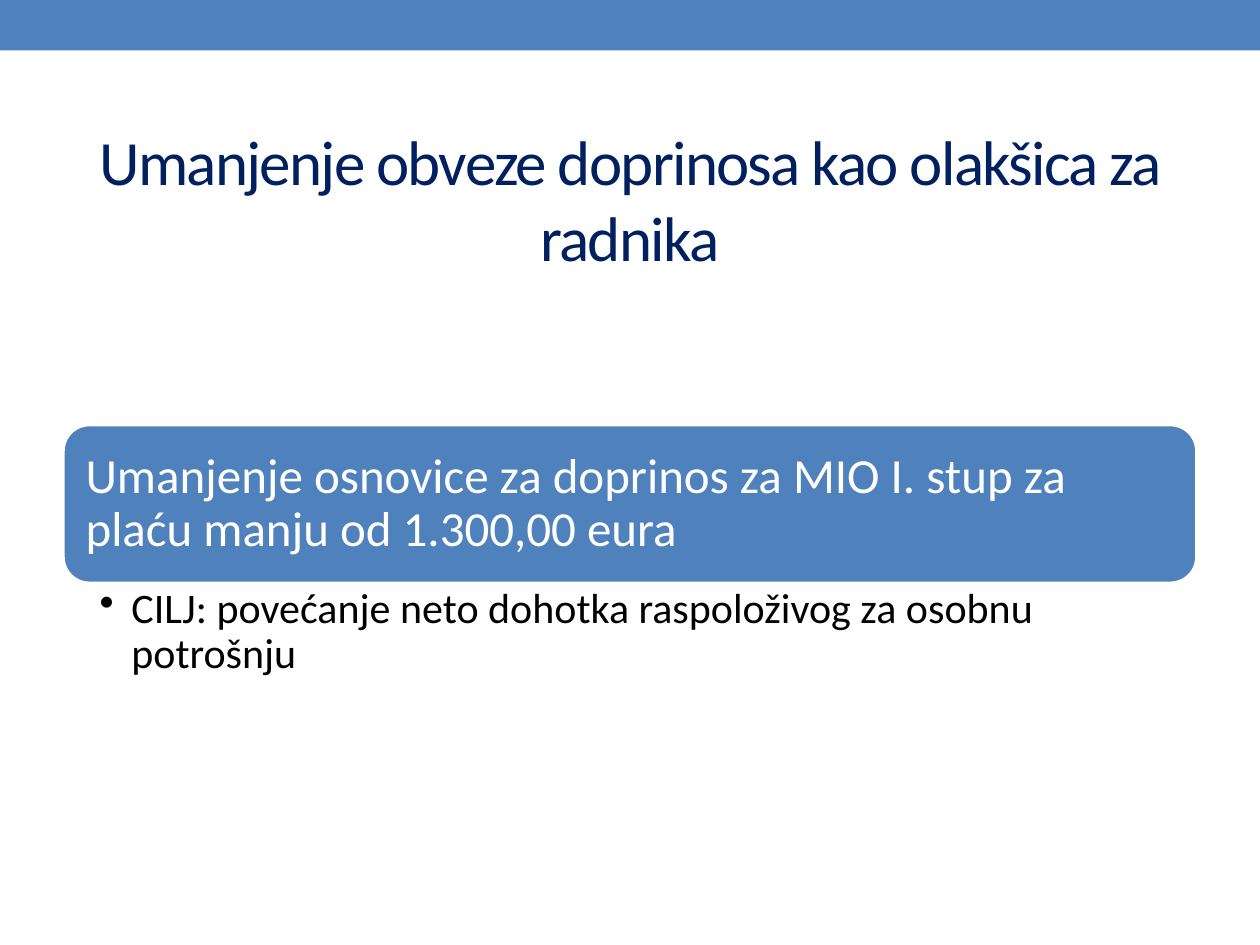
"""Build the slide on reduced pension contributions as a relief for workers."""
from lxml.etree import SubElement
from pptx import Presentation
from pptx.dml.color import RGBColor
from pptx.enum.shapes import MSO_SHAPE
from pptx.enum.text import MSO_ANCHOR, MSO_AUTO_SIZE, PP_ALIGN
from pptx.oxml.ns import qn
from pptx.util import Cm, Pt

BLUE = RGBColor(0x4F, 0x81, 0xBD)
NAVY = RGBColor(0x00, 0x20, 0x60)
WHITE = RGBColor(0xFF, 0xFF, 0xFF)
BLACK = RGBColor(0x00, 0x00, 0x00)
LEFT, WIDTH = Cm(1.27), Cm(22.86)


def fill_text(shape, text, size, color, alignment, anchor, margins):
    frame = shape.text_frame
    frame.word_wrap = True
    frame.auto_size = MSO_AUTO_SIZE.NONE
    frame.vertical_anchor = anchor
    frame.margin_left, frame.margin_top, frame.margin_right, frame.margin_bottom = map(Cm, margins)
    frame.text = text
    paragraph = frame.paragraphs[0]
    paragraph.alignment = alignment
    return paragraph, size, color


def set_font(paragraph, size, color):
    paragraph.font.name = "Calibri"
    paragraph.font.size = Pt(size)
    paragraph.font.color.rgb = color


presentation = Presentation()
presentation.slide_width = Cm(25.4)
presentation.slide_height = Cm(19.05)
slide = presentation.slides.add_slide(presentation.slide_layouts[5])

title = slide.shapes.title
title.left, title.top, title.width, title.height = LEFT, Cm(1.47), WIDTH, Cm(5.05)

band = slide.shapes.add_shape(MSO_SHAPE.RECTANGLE, 0, 0, presentation.slide_width, Cm(1.02))
band.line.fill.background()
measure = slide.shapes.add_shape(MSO_SHAPE.ROUNDED_RECTANGLE, LEFT, Cm(8.56), WIDTH, Cm(3.2))
measure.line.color.rgb = WHITE
measure.line.width = Pt(2)
for shape in (band, measure):
    shape.shadow.inherit = False
    shape.fill.solid()
    shape.fill.fore_color.rgb = BLUE

goal = slide.shapes.add_textbox(LEFT, Cm(11.76), WIDTH, Cm(3))

texts = [
    (title, "Umanjenje obveze doprinosa kao olakšica za radnika", 36, NAVY,
     PP_ALIGN.CENTER, MSO_ANCHOR.MIDDLE, (0.25, 0.13, 0.25, 0.13)),
    (measure, "Umanjenje osnovice za doprinos za MIO I. stup za plaću manju od 1.300,00 eura",
     28, WHITE, PP_ALIGN.LEFT, MSO_ANCHOR.MIDDLE, (0.3, 0.3, 0.3, 0.3)),
    (goal, "CILJ: povećanje neto dohotka raspoloživog za osobnu potrošnju", 24, BLACK,
     PP_ALIGN.LEFT, MSO_ANCHOR.TOP, (0.74, 0.08, 0.48, 0.08)),
]
for shape, *details in texts:
    paragraph, size, color = fill_text(shape, *details)
    if shape is title:
        set_font(paragraph, size, color)
        paragraph.runs[0].font._element.set("spc", "-100")
        continue
    paragraph.line_spacing = 0.9
    if shape is goal:
        properties = paragraph._p.get_or_add_pPr()
        properties.set("lvl", "1")
        properties.set("marL", str(Cm(0.64)))
        properties.set("indent", str(-Cm(0.64)))
        SubElement(properties, qn("a:buChar")).set("char", "•")
    set_font(paragraph, size, color)

presentation.save("out.pptx")
